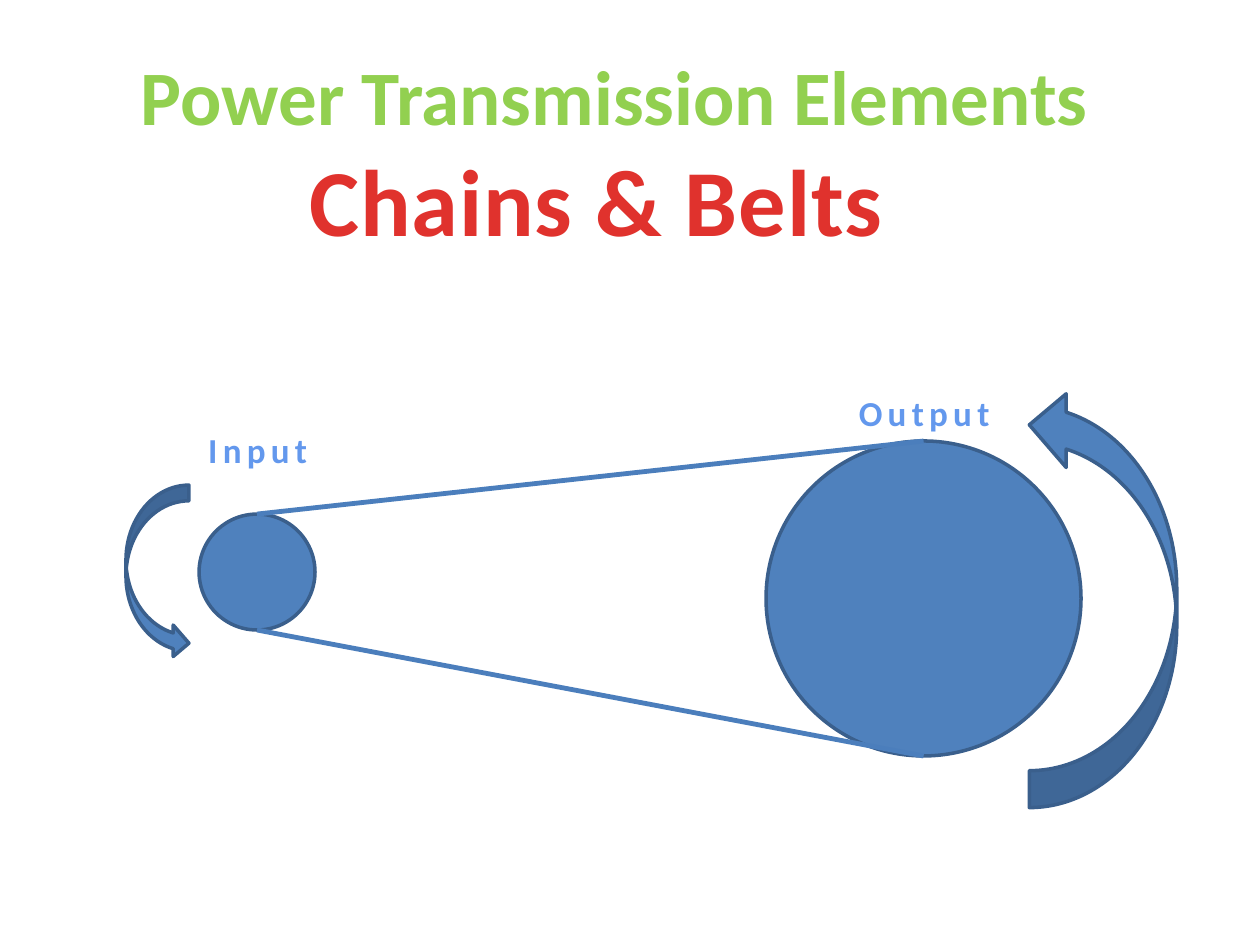
from pptx import Presentation
from pptx.dml.color import RGBColor
from pptx.enum.shapes import MSO_CONNECTOR as Link, MSO_SHAPE as Form
from pptx.enum.text import MSO_ANCHOR as Anchor, MSO_AUTO_SIZE as Fit, PP_ALIGN as Align
from pptx.oxml.ns import qn
from pptx.util import Inches, Pt
from lxml.etree import SubElement

GREEN = RGBColor(0x92, 0xD0, 0x50)
RED = RGBColor(0xE0, 0x32, 0x2D)
SKY = RGBColor(0x63, 0x98, 0xED)
BLUE = RGBColor(0x4F, 0x81, 0xBD)
EDGE = RGBColor(0x3A, 0x5F, 0x8C)
BELT = RGBColor(0x4B, 0x7E, 0xBC)


def inches(box):
    return [Inches(n) for n in box]


def write(shape, text, size, color, gap=0):
    """Set centred bold text; gap is the letter spacing in points."""
    para = shape.text_frame.paragraphs[0]
    para.alignment = Align.CENTER
    run = para.add_run()
    run.text = text
    look = {"name": "Calibri", "size": Pt(size), "bold": True}
    for key, value in look.items():
        setattr(run.font, key, value)
    run.font.color.rgb = color
    if gap:
        run.font._element.set("spc", str(int(gap * 100)))


def add_title(slide, box, text):
    title = slide.shapes.title
    for key, value in zip(("left", "top", "width", "height"), inches(box)):
        setattr(title, key, value)
    title.text_frame.vertical_anchor = Anchor.MIDDLE
    write(title, text, 44, GREEN)


def add_label(slide, box, text, size, color, gap, wrap=True):
    label = slide.shapes.add_textbox(*inches(box))
    frame = label.text_frame
    frame.word_wrap = wrap
    frame.auto_size = Fit.SHAPE_TO_FIT_TEXT
    write(label, text, size, color, gap)


def add_form(slide, form, box):
    shape = slide.shapes.add_shape(form, *inches(box))
    shape.shadow.inherit = False
    shape.fill.solid()
    shape.fill.fore_color.rgb = BLUE
    shape.line.color.rgb = EDGE
    shape.line.width = Pt(2)
    return shape


def add_belt(slide, start, end):
    belt = slide.shapes.add_connector(Link.STRAIGHT, *inches(start + end))
    belt.line.color.rgb = BELT
    belt.line.width = Pt(2.75)
    SubElement(belt._element.spPr, qn("a:effectLst"))


def add_drive(slide, small, large):
    """Draw two pulleys, each (left, top, diameter), and the belt around them."""
    for left, top, size in (small, large):
        add_form(slide, Form.OVAL, (left, top, size, size))
    for side in (0, 1):
        start, end = [(left + size / 2, top + side * size)
                      for left, top, size in (small, large)]
        add_belt(slide, start, end)


def add_turn(slide, box, flip=False):
    arrow = add_form(slide, Form.CURVED_RIGHT_ARROW, box)
    if flip:
        for key in ("flipH", "flipV"):
            arrow._element.spPr.xfrm.set(key, "1")


def main():
    deck = Presentation()
    deck.slide_width, deck.slide_height = inches((10, 7.5))
    slide = deck.slides.add_slide(deck.slide_layouts[5])
    add_title(slide, (0.63, 0.25, 8.5, 1), "Power Transmission Elements")
    add_label(slide, (2.33, 1.08, 4.81, 1.01), "Chains & Belts", 54, RED, 0.5, wrap=False)
    add_drive(slide, (1.58, 4.08, 0.92), (6.08, 3.5, 2.5))
    add_turn(slide, (1, 3.85, 0.5, 1.38))
    add_turn(slide, (8.17, 3.08, 1.17, 3.33), flip=True)
    add_label(slide, (1.42, 3.35, 1.25, 0.44), "Input", 20, SKY, 3)
    add_label(slide, (6.62, 3.06, 1.43, 0.44), "Output", 20, SKY, 3)
    deck.save("out.pptx")


if __name__ == "__main__":
    main()
